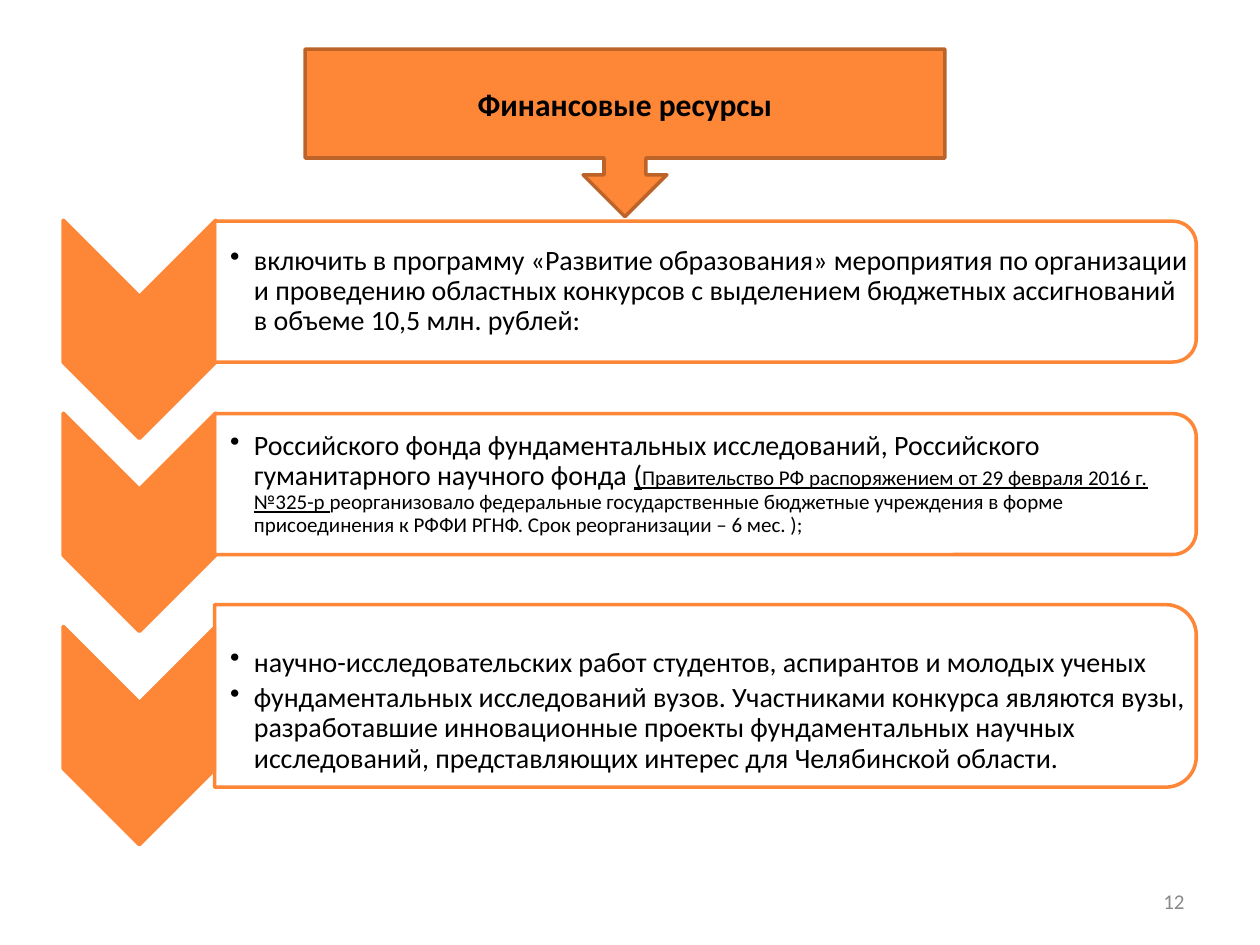
"""Build a slide on financial resources with three chevron-marked panels."""
from lxml import etree
from pptx import Presentation
from pptx import util as u
from pptx.dml.color import RGBColor
from pptx.enum import shapes, text
from pptx.oxml.ns import qn

COLORS = {"orange": "FE8637", "border": "BC6329", "white": "FFFFFF",
          "black": "000000", "gray": "898989"}
FONT = "Calibri"
TITLE = "Финансовые ресурсы"
PAGE_NUMBER = "12"
BODY, SMALL = 16, 12

STEPS = [
    {"chevron_y": 6.64, "panel_y": 5.88, "height": 2.84, "inset_top": 0.03, "items": [
        [("включить в программу «Развитие образования» мероприятия по организации и проведению "
          "областных конкурсов с выделением бюджетных ассигнований в объеме 10,5 млн. рублей:",
          BODY, False)]]},
    {"chevron_y": 10.53, "panel_y": 9.76, "height": 2.84, "inset_top": 0.03, "items": [
        [("Российского фонда фундаментальных исследований, Российского гуманитарного научного фонда ",
          BODY, False),
         ("(", BODY, True),
         ("Правительство РФ распоряжением от 29 февраля 2016 г. №325-р ", SMALL, True),
         ("реорганизовало федеральные государственные бюджетные учреждения в форме присоединения "
          "к РФФИ РГНФ. Срок реорганизации – 6 мес. );", SMALL, False)]]},
    {"chevron_y": 14.83, "panel_y": 14.03, "height": 3.68, "inset_top": 0.64, "items": [
        [("научно-исследовательских работ студентов, аспирантов и молодых ученых", BODY, False)],
        [("фундаментальных исследований вузов. Участниками конкурса являются вузы, разработавшие "
          "инновационные проекты фундаментальных научных исследований, представляющих интерес "
          "для Челябинской области.", BODY, False)]]},
]

CHEVRON_X, CHEVRON_LENGTH, CHEVRON_BREADTH = 2.81, 4.4, 3.07
PANEL_X, PANEL_LENGTH = 14.22, 19.79
TEXT_LEFT, TEXT_WIDTH = 4.34, 19.66


def color(name):
    return RGBColor.from_string(COLORS[name])


def style(font, size, name="black", bold=False, underline=False):
    font.name, font.size, font.bold, font.underline = FONT, u.Pt(size), bold, underline
    font.color.rgb = color(name)


def add_block(page, kind, left, top, width, height, fill, line="orange"):
    block = page.shapes.add_shape(kind, *map(u.Cm, (left, top, width, height)))
    block.shadow.inherit = False
    block.fill.solid()
    block.fill.fore_color.rgb = color(fill)
    block.line.color.rgb = color(line)
    block.line.width = u.Pt(2)
    return block


def add_turned(page, kind, center_x, center_y, width, height, fill):
    block = add_block(page, kind, center_x - width / 2, center_y - height / 2,
                      width, height, fill)
    block.rotation = 90
    return block


def add_text(page, left, top, width, height):
    box = page.shapes.add_textbox(*map(u.Cm, (left, top, width, height)))
    frame = box.text_frame
    frame.word_wrap = True
    frame.vertical_anchor = text.MSO_ANCHOR.MIDDLE
    return frame


def add_bullet(para):
    properties = para._p.get_or_add_pPr()
    properties.set("marL", str(u.Cm(0.48)))
    properties.set("indent", str(u.Cm(-0.48)))
    etree.SubElement(properties, qn("a:buChar"), char="•")
    para.line_spacing = 0.9
    para.space_after = u.Pt(3)


def add_step(page, step):
    add_turned(page, shapes.MSO_SHAPE.CHEVRON, CHEVRON_X, step["chevron_y"],
               CHEVRON_LENGTH, CHEVRON_BREADTH, "orange")
    panel = add_turned(page, shapes.MSO_SHAPE.ROUND_2_SAME_RECTANGLE, PANEL_X, step["panel_y"],
                       step["height"], PANEL_LENGTH, "white")
    fill = panel._element.spPr.find(qn("a:solidFill"))
    etree.SubElement(fill[0], qn("a:alpha"), val="90000")

    height = step["height"] - 0.3
    frame = add_text(page, TEXT_LEFT, step["panel_y"] - height / 2, TEXT_WIDTH, height)
    frame.margin_left, frame.margin_top = u.Cm(0.3), u.Cm(step["inset_top"])
    frame.margin_right = frame.margin_bottom = u.Cm(0.03)
    for index, item in enumerate(step["items"]):
        para = frame.add_paragraph() if index else frame.paragraphs[0]
        add_bullet(para)
        for words, size, underline in item:
            span = para.add_run()
            span.text = words
            style(span.font, size, underline=underline)


def main():
    deck = Presentation()
    deck.slide_width, deck.slide_height = u.Cm(25.4), u.Cm(19.05)
    page = deck.slides.add_slide(deck.slide_layouts[6])

    for step in STEPS:
        add_step(page, step)

    number = add_text(page, 18.2, 17.66, 5.93, 1.01)
    number.text = PAGE_NUMBER
    number.paragraphs[0].alignment = text.PP_ALIGN.RIGHT
    style(number.paragraphs[0].runs[0].font, SMALL, "gray")

    callout = add_block(page, shapes.MSO_SHAPE.DOWN_ARROW_CALLOUT,
                        6.15, 0.99, 12.9, 3.38, "orange", "border")
    callout.text_frame.text = TITLE
    callout.text_frame.vertical_anchor = text.MSO_ANCHOR.MIDDLE
    heading = callout.text_frame.paragraphs[0]
    heading.alignment = text.PP_ALIGN.CENTER
    style(heading.runs[0].font, 18, bold=True)

    deck.save("out.pptx")


if __name__ == "__main__":
    main()
